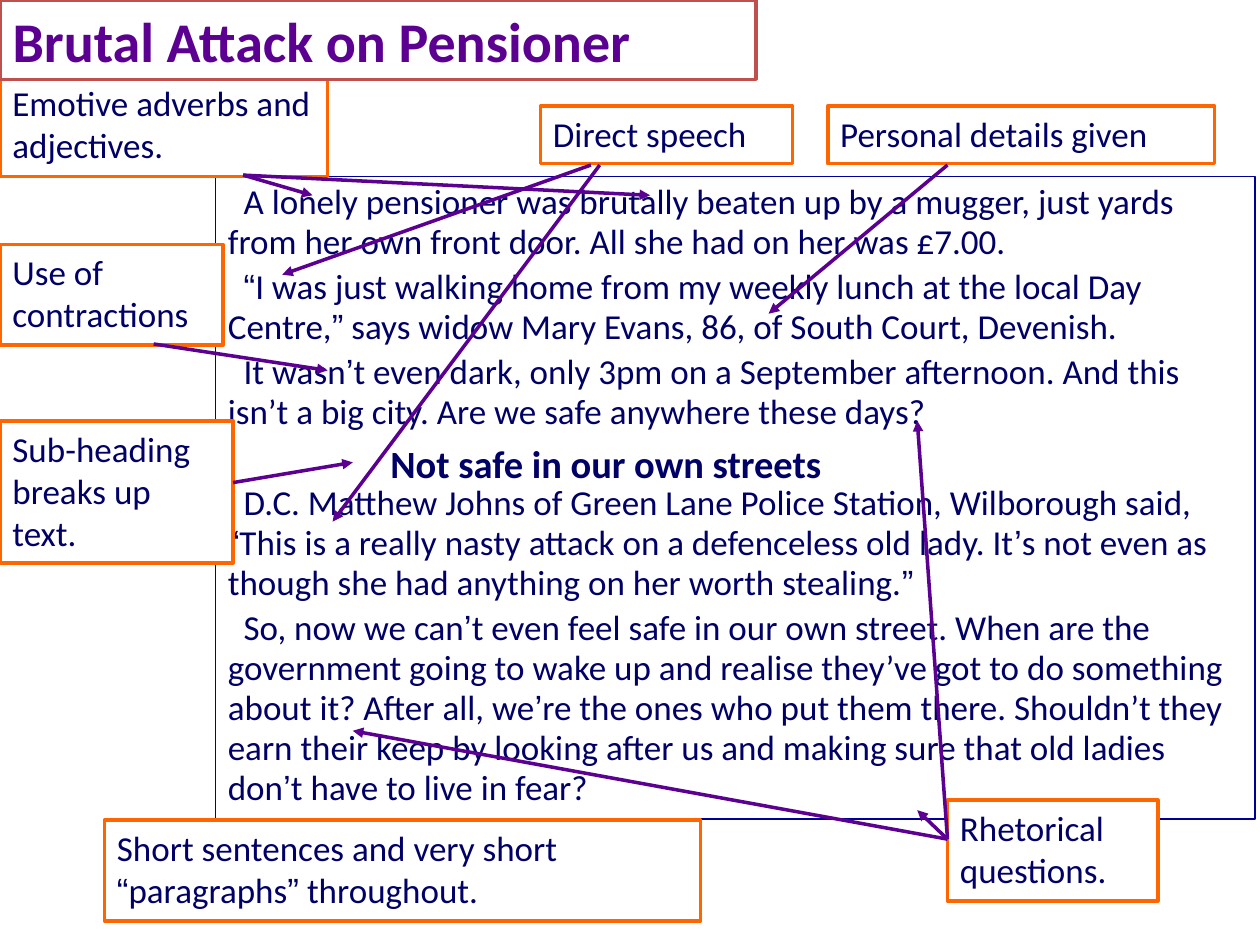
"""Build an annotated newspaper article slide with labels and arrows."""
from lxml.etree import SubElement
from pptx import Presentation
from pptx.dml.color import RGBColor
from pptx.enum.shapes import MSO_CONNECTOR as CONN, MSO_SHAPE as SHAPE
from pptx.enum.text import MSO_ANCHOR as ANCHOR, MSO_AUTO_SIZE as FIT, PP_ALIGN as ALIGN
from pptx.oxml.ns import qn
from pptx.util import Inches, Pt

COLORS = {"ink": "010066", "purple": "5B0091", "orange": "FF6600",
          "red": "C0504D", "navy": "000099", "white": "FFFFFF"}
FONTS = ("Calibri", "Arial")
SWITCH = "|"

TITLE = "Brutal Attack on Pensioner"
SUBHEADING = "Not safe in our own streets"
ARTICLE = [
    "A lonely pensioner was brutally beaten up by a mugger, just yards from her own "
    "front door. All she had on her was £7.00.",
    "|“|I was just walking home from my weekly lunch at the local Day Centre,|”| says "
    "widow Mary Evans, 86, of South Court, Devenish.",
    "It wasn|’|t even dark, only 3pm on a September afternoon. And this isn’t a big "
    "city. Are we safe anywhere these days?",
    "D.C. Matthew Johns of Green Lane Police Station, Wilborough said, |“|This is a "
    "really nasty attack on a defenceless old lady. It|’|s not even as though she had "
    "anything on her worth stealing.|”",
    "So, now we can|’|t even feel safe in our own street. When are the government going "
    "to wake up and realise they’ve got to do something about it? After all, we|’|re the "
    "ones who put them there. Shouldn’t they earn their keep by looking after us and "
    "making sure that old ladies don|’|t have to live in fear?",
]
GAPS = [0, 3, 3, 29, 3]

EMOTIVE = ("Emotive adverbs and adjectives.", (0, 0.6, 2.6, 0.8))
LABELS = [
    ("Direct speech", (4.29, 0.84, 2, 0.46)),
    ("Personal details given", (6.57, 0.84, 3.07, 0.46)),
    ("Use of contractions", (0, 1.94, 1.77, 0.8)),
    ("Rhetorical questions.", (7.52, 6.35, 1.67, 0.8)),
    ("Sub-heading breaks up text.", (0, 3.34, 1.85, 1.13)),
    ("Short sentences and very short |“|paragraphs|”| throughout.", (0.83, 6.51, 4.73, 0.8)),
]
ARROWS = [
    ((4.69, 1.31), [(2.24, 2.18)]),
    ((7.52, 1.31), [(6.1, 2.49)]),
    ((1.22, 2.73), [(2.6, 2.94)]),
    ((7.52, 6.66), [(7.28, 6.43), (7.28, 3.34), (2.8, 5.8)]),
    ((4.76, 1.31), [(2.64, 4.14)]),
    ((1.85, 3.83), [(2.8, 3.67)]),
    ((1.93, 1.39), [(2.48, 1.55), (5.16, 1.55)]),
]


def rgb(name):
    return RGBColor.from_string(COLORS[name])


def write(tf, texts, size=20, color="ink", bold=False, anchor=ANCHOR.TOP,
          wrap=True, fit=FIT.NONE, spacing=1.0, gaps=(0,), indent=0):
    tf.word_wrap, tf.vertical_anchor, tf.auto_size = wrap, anchor, fit
    for i, (text, gap) in enumerate(zip(texts, gaps)):
        p = tf.add_paragraph() if i else tf.paragraphs[0]
        p.alignment, p.line_spacing, p.space_before = ALIGN.LEFT, spacing, Pt(gap)
        if indent:
            p._p.get_or_add_pPr().set("indent", str(Inches(indent)))
        for j, part in enumerate(text.split(SWITCH)):
            if part:
                r = p.add_run()
                r.text = part
                r.font.name, r.font.size, r.font.bold = FONTS[j % 2], Pt(size), bold
                r.font.color.rgb = rgb(color)


def frame(sp, line, width=2):
    sp.fill.solid()
    sp.fill.fore_color.rgb = rgb("white")
    sp.line.color.rgb = rgb(line)
    sp.line.width = Pt(width)


def box(s, place, texts, line="orange", width=2, **fmt):
    sp = s.shapes.add_shape(SHAPE.RECTANGLE, *map(Inches, place))
    sp.shadow.inherit = False
    frame(sp, line, width)
    write(sp.text_frame, texts, fit=FIT.SHAPE_TO_FIT_TEXT, **fmt)


def arrow(s, start, end):
    c = s.shapes.add_connector(CONN.STRAIGHT, *map(Inches, start + end))
    c.line.color.rgb = rgb("purple")
    c.line.width = Pt(2)
    SubElement(c.line._get_or_add_ln(), qn("a:tailEnd"), type="triangle")
    SubElement(c._element.spPr, qn("a:effectLst"))


def main():
    prs = Presentation()
    prs.slide_width, prs.slide_height = Inches(10), Inches(7.5)
    s = prs.slides.add_slide(prs.slide_layouts[5])
    box(s, (1.71, 1.4, 8.25, 5.1), ARTICLE, "navy", 0.75,
        spacing=0.95, gaps=GAPS, indent=0.125)
    box(s, EMOTIVE[1], [EMOTIVE[0]])

    sub = s.shapes.add_textbox(*map(Inches, (3, 3.44, 4.13, 0.47)))
    write(sub.text_frame, [SUBHEADING], size=22, bold=True, anchor=ANCHOR.MIDDLE,
          wrap=False, fit=FIT.SHAPE_TO_FIT_TEXT)

    title = s.shapes.title
    title.left, title.top, title.width, title.height = map(Inches, (0, 0, 6, 0.63))
    frame(title, "red")
    write(title.text_frame, [TITLE], size=32, color="purple", bold=True)
    s.shapes._spTree.append(title._element)

    for text, place in LABELS:
        box(s, place, [text])
    for start, ends in ARROWS:
        for end in ends:
            arrow(s, start, end)
    prs.save("out.pptx")


if __name__ == "__main__":
    main()
